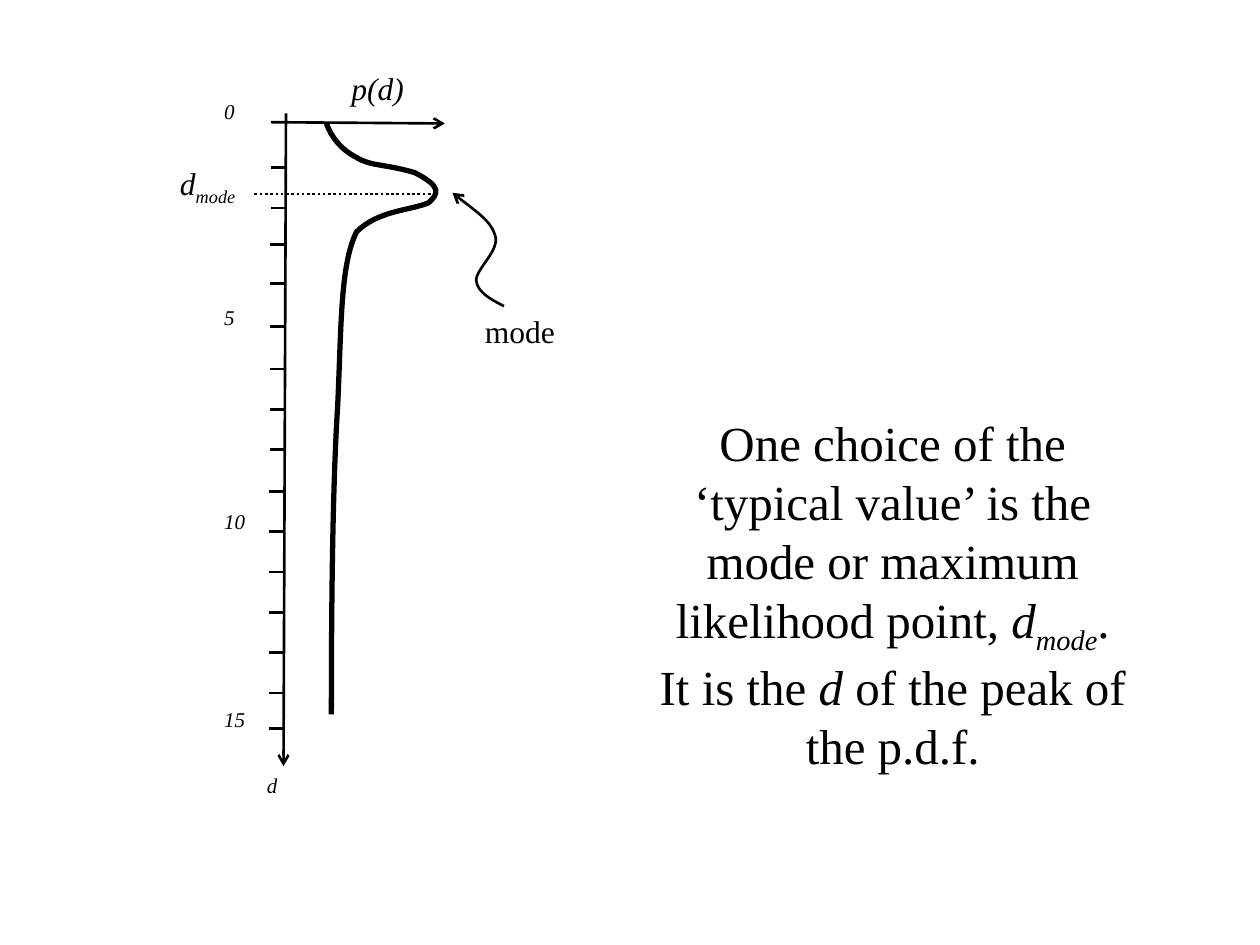
from lxml import etree
from pptx import Presentation
from pptx.dml.color import RGBColor
from pptx.enum import dml, shapes, text
from pptx.oxml.ns import qn
from pptx.util import Inches, Pt

COLORS = {"ink": "000000"}
INK = RGBColor.from_string(COLORS["ink"])
FONT = "Times New Roman"

presentation = Presentation()
presentation.slide_width, presentation.slide_height = Inches(10), Inches(7.5)
slide = presentation.slides.add_slide(presentation.slide_layouts[5])


def draw_line(points, width=1.5, arrow=None):
    """Draw a connector for two points, or a cubic Bézier outline for more."""
    points = [(Inches(x), Inches(y)) for x, y in points]
    if len(points) == 2:
        shape = slide.shapes.add_connector(
            shapes.MSO_CONNECTOR.STRAIGHT, *points[0], *points[1])
        etree.SubElement(shape._element.spPr, qn("a:effectLst"))
    else:
        builder = slide.shapes.build_freeform(*points[0])
        builder.add_line_segments(points[1:], close=False)
        shape = builder.convert_to_shape()
        shape.fill.background()
        shape.shadow.inherit = False
        # Every three straight segments become one curve through their points
        segments = list(shape._element.iter(qn("a:lnTo")))
        outline = segments[0].getparent()
        for start in range(0, len(segments), 3):
            curve = etree.SubElement(outline, qn("a:cubicBezTo"))
            for segment in segments[start:start + 3]:
                curve.append(segment[0])
                outline.remove(segment)
    shape.line.color.rgb = INK
    shape.line.width = Pt(width)
    if arrow:
        etree.SubElement(shape.line._get_or_add_ln(), qn(f"a:{arrow}"), type="arrow")
    return shape


def write_runs(paragraph, pieces, size):
    """Add (text, style) runs; style holds i for italic and s for subscript."""
    for content, style in pieces:
        run = paragraph.add_run()
        run.text = content
        run.font.name = FONT
        run.font.size = Pt(size)
        run.font.color.rgb = INK
        run.font.italic = "i" in style
        if "s" in style:
            run.font._element.set("baseline", "-25000")


# Axes and depth ticks
draw_line([(2.27, 0.9), (2.25, 6.08)], arrow="tailEnd")
draw_line([(2.15, 0.97), (3.53, 0.98)], arrow="tailEnd")
tick_depths = [1.33, 1.65, 1.94, 2.25, 2.59, 2.93, 3.25, 3.57,
               3.9, 4.22, 4.54, 4.86, 5.18, 5.5, 5.78]
for y in tick_depths:
    axis_x = 2.27 - 0.02 * (y - 0.9) / 5.18
    draw_line([(axis_x, y), (axis_x - 0.12, y)])

# Density curve and mode pointer: start point, then three points per curve
density = [(2.59, 0.98),
           (2.63, 1.09), (2.71, 1.19), (2.83, 1.25),
           (2.94, 1.32), (3.05, 1.3), (3.29, 1.37),
           (3.51, 1.48), (3.48, 1.54), (3.4, 1.61),
           (3.26, 1.67), (3, 1.67), (2.83, 1.84),
           (2.7, 2.1), (2.71, 2.58), (2.68, 3.22),
           (2.64, 3.85), (2.63, 4.76), (2.63, 5.67)]
pointer = [(3.59, 1.53),
           (3.74, 1.65), (3.9, 1.76), (3.93, 1.87),
           (3.97, 1.99), (3.77, 2.14), (3.78, 2.23),
           (3.79, 2.32), (3.9, 2.38), (4, 2.43)]
draw_line(density, width=3)
draw_line(pointer, arrow="headEnd")

mode_line = draw_line([(2.02, 1.54), (3.46, 1.54)])
mode_line.line.dash_style = dml.MSO_LINE.ROUND_DOT

# Labels: left, top, width, height, size, runs
labels = [
    (1.68, 0.73, 0.69, 0.43, 12, [("0", "i")]),
    (1.68, 2.37, 0.69, 0.43, 12, [("5", "i")]),
    (1.68, 3.99, 0.69, 0.43, 12, [("10", "i")]),
    (1.68, 5.56, 0.69, 0.43, 12, [("15", "i")]),
    (2.02, 6.08, 0.69, 0.43, 12, [("d", "i")]),
    (2.69, 0.5, 0.98, 0.4, 18, [("p(d)", "i")]),
    (3.75, 2.43, 0.92, 0.4, 18, [("mode", "")]),
    (1.33, 1.25, 1.08, 0.4, 18, [("d", "i"), ("mode", "is")]),
]
for left, top, width, height, size, pieces in labels:
    box = slide.shapes.add_textbox(Inches(left), Inches(top), Inches(width), Inches(height))
    box.text_frame.word_wrap = True
    box.text_frame.auto_size = text.MSO_AUTO_SIZE.SHAPE_TO_FIT_TEXT
    write_runs(box.text_frame.paragraphs[0], pieces, size)

# Title statement
title = slide.shapes.title
title.left, title.top = Inches(5), Inches(3)
title.width, title.height = Inches(4.17), Inches(3.42)
frame = title.text_frame
frame.word_wrap = True
frame.auto_size = text.MSO_AUTO_SIZE.NONE
frame.vertical_anchor = text.MSO_ANCHOR.MIDDLE
statements = [
    [("One choice of the ‘typical value’ is the mode or maximum likelihood point, ", ""),
     ("d", "i"), ("mode", "is"), (".", "")],
    [("It is the ", ""), ("d", "i"), (" of the peak of the p.d.f.", "")],
]
for paragraph, pieces in zip([frame.paragraphs[0], frame.add_paragraph()], statements):
    paragraph.alignment = text.PP_ALIGN.CENTER
    write_runs(paragraph, pieces, 28)

presentation.save("out.pptx")
